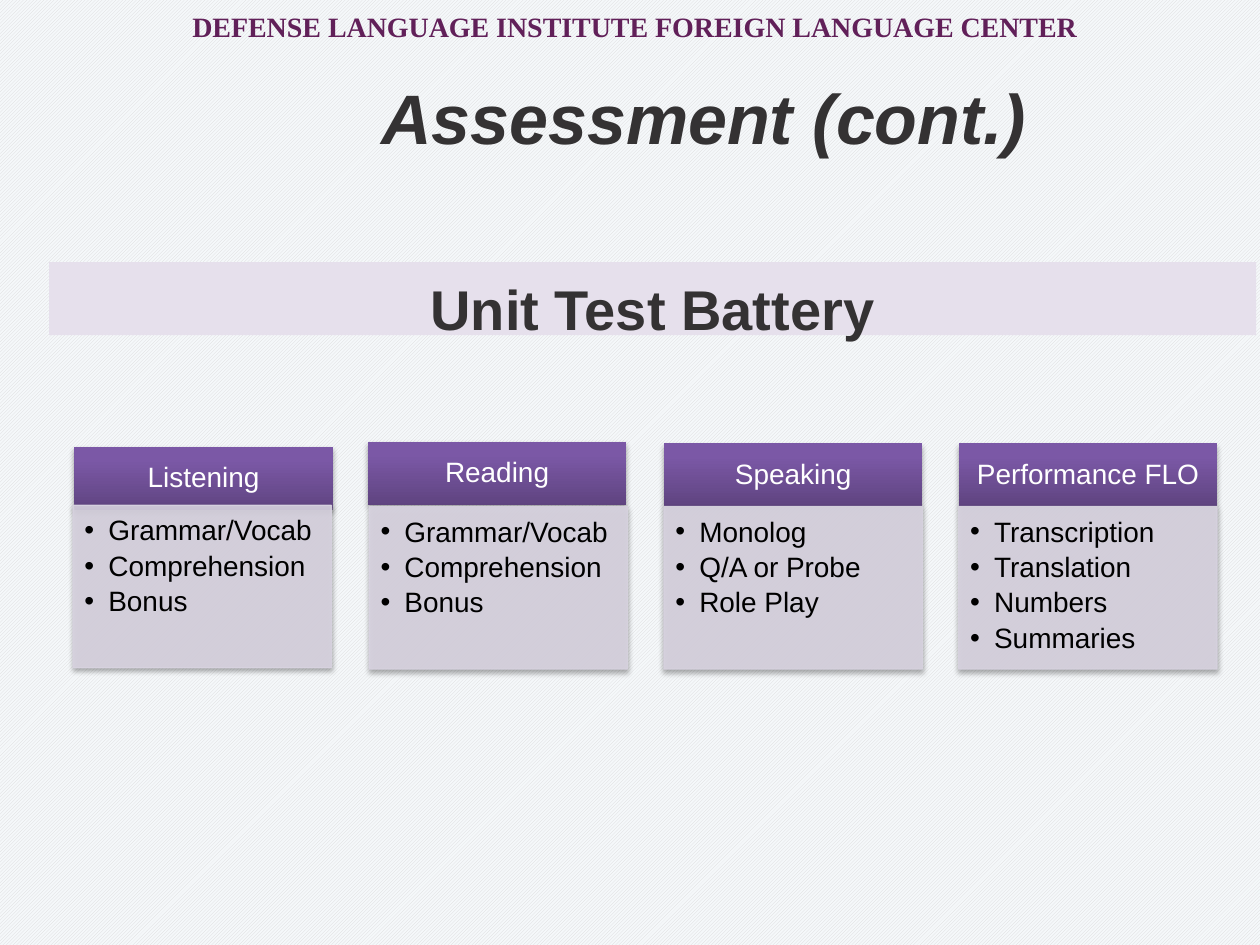
from copy import deepcopy

from lxml import etree
from pptx import Presentation
from pptx.dml.color import RGBColor
from pptx.enum.dml import MSO_PATTERN
from pptx.enum.shapes import MSO_SHAPE
from pptx.enum.text import MSO_ANCHOR, PP_ALIGN
from pptx.oxml.ns import qn
from pptx.util import Inches, Pt

RECTANGLE = MSO_SHAPE.RECTANGLE
UPWARD_DIAGONAL = MSO_PATTERN.LIGHT_UPWARD_DIAGONAL
TOP, MIDDLE = MSO_ANCHOR.TOP, MSO_ANCHOR.MIDDLE
LEFT, CENTER = PP_ALIGN.LEFT, PP_ALIGN.CENTER

HATCH = RGBColor(0xD9, 0xD9, 0xD9)
PAPER = RGBColor(0xF5, 0xF8, 0xFA)
PLUM = RGBColor(0x61, 0x20, 0x59)
CHARCOAL = RGBColor(0x34, 0x32, 0x33)
LAVENDER = RGBColor(0xE6, 0xE0, 0xEC)
CARD = RGBColor(0xD8, 0xD3, 0xE0)
WHITE = RGBColor(0xFF, 0xFF, 0xFF)
BLACK = RGBColor(0x00, 0x00, 0x00)
HEADING_STOPS = [
    (0, RGBColor(0x5F, 0x44, 0x80)),
    (0.8, RGBColor(0x7B, 0x58, 0xA6)),
    (1, RGBColor(0x7C, 0x57, 0xA8)),
]

CARD_WIDTH, HEADING_HEIGHT, LIST_HEIGHT = 2.05, 0.5, 1.29
TESTS = [
    ("Listening", 0.59, 3.55, 0.58, 4.01, ["Grammar/Vocab", "Comprehension", "Bonus"]),
    ("Reading", 2.92, 3.51, 2.93, 4.02, ["Grammar/Vocab", "Comprehension", "Bonus"]),
    ("Speaking", 5.27, 3.52, 5.27, 4.02, ["Monolog", "Q/A or Probe", "Role Play"]),
    ("Performance FLO", 7.61, 3.52, 7.61, 4.02,
     ["Transcription", "Translation", "Numbers", "Summaries"]),
]


def set_frame(frame, anchor, margins=(0.1, 0.05, 0.1, 0.05)):
    frame.word_wrap = True
    frame.vertical_anchor = anchor
    (frame.margin_left, frame.margin_top,
     frame.margin_right, frame.margin_bottom) = map(Inches, margins)


def set_font(paragraph, size, color, name="Arial", bold=False, italic=False):
    font = paragraph.font
    font.name, font.size, font.bold, font.italic = name, Pt(size), bold, italic
    font.color.rgb = color


def write_line(frame, text, size, color, **style):
    paragraph = frame.paragraphs[0]
    paragraph.text = text
    paragraph.alignment = CENTER
    set_font(paragraph, size, color, **style)
    return paragraph


def add_box(slide, left, top, width, height):
    box = slide.shapes.add_shape(
        RECTANGLE, Inches(left), Inches(top), Inches(width), Inches(height))
    box.shadow.inherit = False
    box.line.fill.background()
    return box


def add_alpha(parent, percent):
    etree.SubElement(parent, qn("a:alpha"), val=str(percent * 1000))


def cast_shadow(box):
    effects = box._element.spPr.find(qn("a:effectLst"))
    shadow = etree.SubElement(
        effects, qn("a:outerShdw"), blurRad=str(Pt(3.1)), dist=str(Pt(1.8)),
        dir="5400000", rotWithShape="0")
    add_alpha(etree.SubElement(shadow, qn("a:srgbClr"), val=str(BLACK)), 35)


def fill_heading(box):
    box.fill.gradient()
    box.fill.gradient_angle = 90
    stops = box._element.spPr.find(".//" + qn("a:gsLst"))
    stops.append(deepcopy(stops[0]))
    for stop, (position, color) in zip(box.fill.gradient_stops, HEADING_STOPS):
        stop.position = position
        stop.color.rgb = color


def add_bullet(paragraph):
    properties = paragraph._p.get_or_add_pPr()
    properties.set("marL", str(Inches(0.19)))
    properties.set("indent", str(Inches(-0.19)))
    etree.SubElement(properties, qn("a:buFont"), typeface="Arial")
    etree.SubElement(properties, qn("a:buChar"), char="•")


def add_institute_name(slide, left, top, width, height):
    institute = slide.shapes.add_textbox(
        Inches(left), Inches(top), Inches(width), Inches(height))
    set_frame(institute.text_frame, MIDDLE)
    write_line(institute.text_frame, "DEFENSE LANGUAGE INSTITUTE FOREIGN LANGUAGE CENTER",
               16, PLUM, name="Times New Roman", bold=True)


def place_title(slide, left, top, width, height):
    title = slide.shapes.title
    title.left, title.top = Inches(left), Inches(top)
    title.width, title.height = Inches(width), Inches(height)
    set_frame(title.text_frame, MIDDLE)
    write_line(title.text_frame, "Assessment (cont.)", 40, CHARCOAL, bold=True, italic=True)


def add_banner(slide, left, top, width, height):
    banner = add_box(slide, left, top, width, height)
    banner.fill.solid()
    banner.fill.fore_color.rgb = LAVENDER
    set_frame(banner.text_frame, TOP, (0.1, 0.1, 0.1, 0))
    write_line(banner.text_frame, "Unit Test Battery", 32, CHARCOAL, bold=True)


def add_heading(slide, name, left, top, width, height):
    heading = add_box(slide, left, top, width, height)
    fill_heading(heading)
    cast_shadow(heading)
    set_frame(heading.text_frame, MIDDLE, (0.12, 0.07, 0.12, 0.07))
    write_line(heading.text_frame, name, 16, WHITE).line_spacing = 0.9


def add_parts_list(slide, parts, left, top, width, height):
    card = add_box(slide, left, top, width, height)
    card.line.width = Pt(0.75)
    card.fill.solid()
    card.line.fill.solid()
    for paint in (card.fill, card.line.fill):
        paint.fore_color.rgb = CARD
    for color in card._element.spPr.findall(".//" + qn("a:srgbClr")):
        add_alpha(color, 90)
    cast_shadow(card)
    frame = card.text_frame
    set_frame(frame, TOP, (0.09, 0.09, 0.12, 0.14))
    for index, part in enumerate(parts):
        paragraph = frame.add_paragraph() if index else frame.paragraphs[0]
        paragraph.text = part
        add_bullet(paragraph)
        paragraph.alignment = LEFT
        paragraph.line_spacing = 0.9
        paragraph.space_after = Pt(3)
        set_font(paragraph, 16, BLACK)


def main():
    deck = Presentation()
    deck.slide_width, deck.slide_height = Inches(10), Inches(7.5)
    slide = deck.slides.add_slide(deck.slide_layouts[5])
    backdrop = slide.background.fill
    backdrop.patterned()
    backdrop.pattern = UPWARD_DIAGONAL
    backdrop.fore_color.rgb = HATCH
    backdrop.back_color.rgb = PAPER

    add_institute_name(slide, 0, -0.08, 10.08, 0.58)
    add_banner(slide, 0.39, 2.08, 9.58, 0.58)
    place_title(slide, 1.5, 0.3, 8.17, 1.25)
    for name, heading_left, heading_top, list_left, list_top, parts in TESTS:
        add_heading(slide, name, heading_left, heading_top, CARD_WIDTH, HEADING_HEIGHT)
        add_parts_list(slide, parts, list_left, list_top, CARD_WIDTH, LIST_HEIGHT)
    deck.save("out.pptx")


if __name__ == "__main__":
    main()
